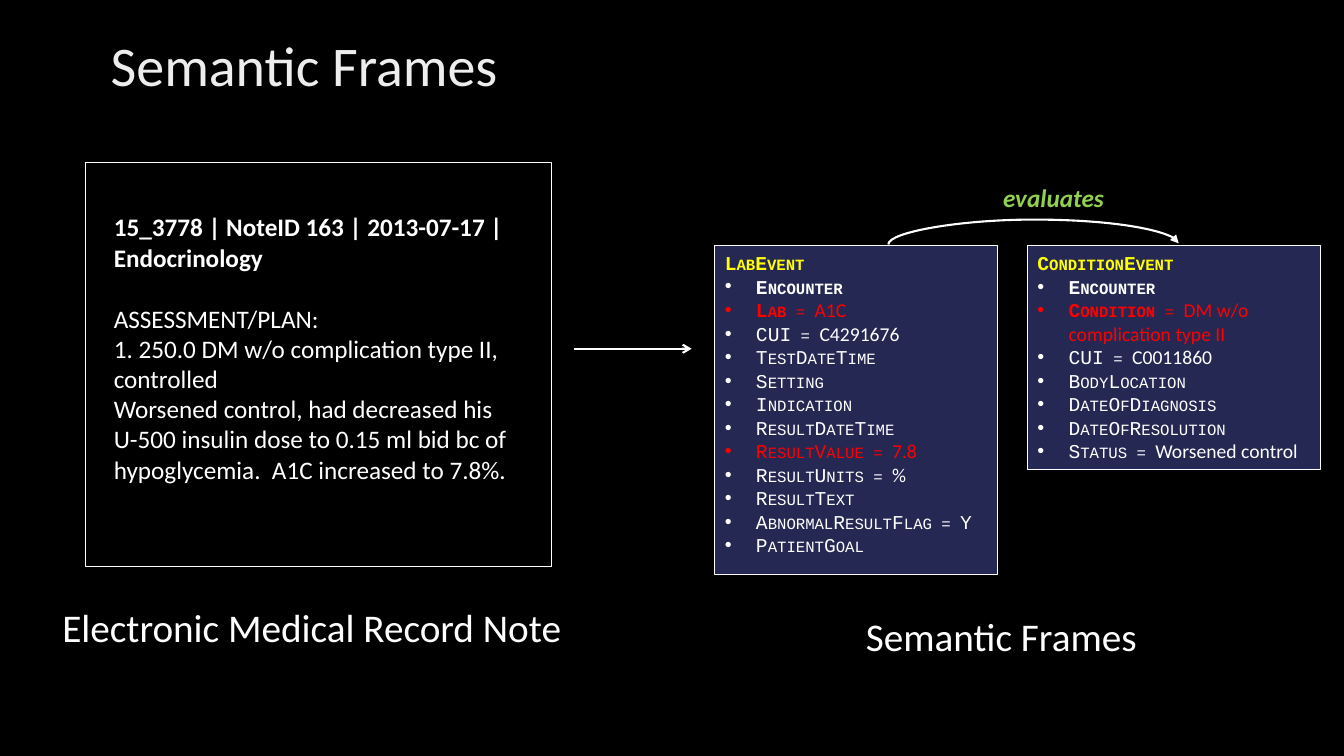
from lxml import etree
from pptx import Presentation, util as u
from pptx.dml.color import RGBColor
from pptx.enum import shapes, text
from pptx.oxml import parse_xml
from pptx.oxml.ns import qn

I = u.Inches
NS = 'xmlns:a="http://schemas.openxmlformats.org/drawingml/2006/main"'
C = {"black": "000000", "white": "FFFFFF", "navy": "242852",
     "yellow": "FFFF00", "red": "FF0000", "green": "92D050"}
BODY, CODE = "Calibri", "Courier New"

# Content
TITLE = "Semantic Frames"
TITLE_STOPS = [(0, "BFBFBF"), (28, "EDEDED"), (100, "FFFFFF")]
NOTE = [  # text, bold, points before
    ("15_3778 | NoteID 163 | 2013-07-17 | Endocrinology", True, 0),
    ("ASSESSMENT/PLAN:", False, 22),
    ("1. 250.0 DM w/o complication type II, controlled", False, 0),
    ("Worsened control, had decreased his U-500 insulin dose to 0.15 ml bid bc of "
     "hypoglycemia.  A1C increased to 7.8%.", False, 0),
]
LABELS = [  # text, box, size, colour, emphasis
    ("Electronic Medical Record Note", (0.52, 5.94, 5.2, 0.57), 28, "white", False),
    ("Semantic Frames", (8.49, 6.03, 2.92, 0.57), 28, "white", False),
    ("evaluates", (9.85, 1.76, 1.21, 0.4), 18, "green", True),
]
FRAMES = [  # heading, box, slots: name, value, colour, bold
    ("LabEvent", (7.09, 2.44, 2.8, 3.26), [
        ("Encounter", "", "white", True),
        ("Lab", "A1C", "red", True),
        ("CUI", "C4291676", "white", False),
        ("TestDateTime", "", "white", False),
        ("Setting", "", "white", False),
        ("Indication", "", "white", False),
        ("ResultDateTime", "", "white", False),
        ("ResultValue", "7.8", "red", False),
        ("ResultUnits", "%", "white", False),
        ("ResultText", "", "white", False),
        ("AbnormalResultFlag = Y", "", "white", False),
        ("PatientGoal", "", "white", False)]),
    ("ConditionEvent", (10.19, 2.44, 2.91, 2.22), [
        ("Encounter", "", "white", True),
        ("Condition", "DM w/o complication type II", "red", True),
        ("CUI", "C0011860", "white", False),
        ("BodyLocation", "", "white", False),
        ("DateOfDiagnosis", "", "white", False),
        ("DateOfResolution", "", "white", False),
        ("Status", "Worsened control", "white", False)]),
]


def rgb(name):
    return RGBColor.from_string(C[name])


def add_run(p, words, size, color="white", bold=False, font=BODY, italic=False):
    r = p.add_run()
    r.text = words
    f = r.font
    f.size, f.name, f.bold, f.italic = u.Pt(size), font, bold, italic
    f.color.rgb = rgb(color)
    if font == CODE:
        f._element.set("cap", "small")
    return r


def add_text(s, box, wrap=True):
    tf = s.shapes.add_textbox(*map(I, box)).text_frame
    tf.word_wrap = wrap
    return tf


def add_rect(s, box, width, fill=None):
    sp = s.shapes.add_shape(shapes.MSO_SHAPE.RECTANGLE, *map(I, box))
    sp.shadow.inherit = False
    if fill:
        sp.fill.solid()
        sp.fill.fore_color.rgb = rgb(fill)
    else:
        sp.fill.background()
    sp.line.color.rgb = rgb("white")
    sp.line.width = u.Pt(width)
    return sp


def add_arrow(s, kind, start, end, head):
    cx = s.shapes.add_connector(kind, *map(I, start + end))
    cx.line.color.rgb = rgb("white")
    cx.line.width = u.Pt(1.5)
    cx.line._get_or_add_ln().append(parse_xml(f'<a:tailEnd {NS} type="{head}"/>'))
    etree.SubElement(cx._element.spPr, qn("a:effectLst"))
    return cx


def add_bullet(p):
    pPr = p._p.get_or_add_pPr()
    pPr.set("marL", str(I(0.31)))
    pPr.set("indent", str(-I(0.31)))
    pPr.append(parse_xml(f'<a:buFont {NS} typeface="Arial"/>'))
    pPr.append(parse_xml(f'<a:buChar {NS} char="•"/>'))


prs = Presentation()
prs.slide_width, prs.slide_height = I(13.33), I(7.5)
s = prs.slides.add_slide(prs.slide_layouts[6])
s.background.fill.solid()
s.background.fill.fore_color.rgb = rgb("black")

# Title with gradient lettering
tf = add_text(s, (1, 0.32, 11.33, 0.72))
tf.vertical_anchor = text.MSO_ANCHOR.MIDDLE
p = tf.paragraphs[0]
p.line_spacing = 0.9
rPr = add_run(p, TITLE, 40).font._element
stops = "".join(f'<a:gs pos="{at * 1000}"><a:srgbClr val="{c}"/></a:gs>'
                for at, c in TITLE_STOPS)
rPr.replace(rPr.find(qn("a:solidFill")), parse_xml(
    f'<a:gradFill {NS}><a:gsLst>{stops}</a:gsLst><a:lin ang="{80 * 60000}"/></a:gradFill>'))

# Medical record note
tf = add_text(s, (1.03, 2.05, 4.19, 3.13))
for i, (words, bold, before) in enumerate(NOTE):
    p = tf.add_paragraph() if i else tf.paragraphs[0]
    if before:
        p.space_before = u.Pt(before)
    add_run(p, words, 18, bold=bold)
add_rect(s, (0.85, 1.61, 4.62, 4.01), 1)

# Captions and relation label
for words, box, size, color, strong in LABELS:
    tf = add_text(s, box, wrap=False)
    add_run(tf.paragraphs[0], words, size, color, strong, italic=strong)

# Arrow from note to frames
add_arrow(s, shapes.MSO_CONNECTOR.STRAIGHT, (5.69, 3.46), (6.86, 3.46), "arrow")

# Arc between frames: a tall, thin curve turned a quarter, bulging 25 times its width
mid_x, mid_y, span, thin = 10.25, 2.42, 2.88, 0.01
arc = add_arrow(s, shapes.MSO_CONNECTOR.CURVE,
                (mid_x + thin / 2, mid_y + span / 2),
                (mid_x - thin / 2, mid_y - span / 2), "triangle")
spPr = arc._element.spPr
spPr.find(qn("a:xfrm")).set("rot", str(90 * 60000))
guides = spPr.find(qn("a:prstGeom")).find(qn("a:avLst"))
etree.SubElement(guides, qn("a:gd"), name="adj1", fmla=f"val {25 * 100000}")

# Semantic frames
for heading, box, slots in FRAMES:
    tf = add_rect(s, box, 0.75, "navy").text_frame
    tf.word_wrap = True
    tf.vertical_anchor = text.MSO_ANCHOR.TOP
    p = tf.paragraphs[0]
    p.alignment = text.PP_ALIGN.LEFT
    add_run(p, heading, 14, "yellow", True, CODE)
    for name, value, color, bold in slots:
        p = tf.add_paragraph()
        p.alignment = text.PP_ALIGN.LEFT
        add_bullet(p)
        add_run(p, name, 14, color, bold, CODE)
        if value:
            add_run(p, " = ", 14, color, font=CODE)
            add_run(p, value, 14, color)

prs.save("out.pptx")
